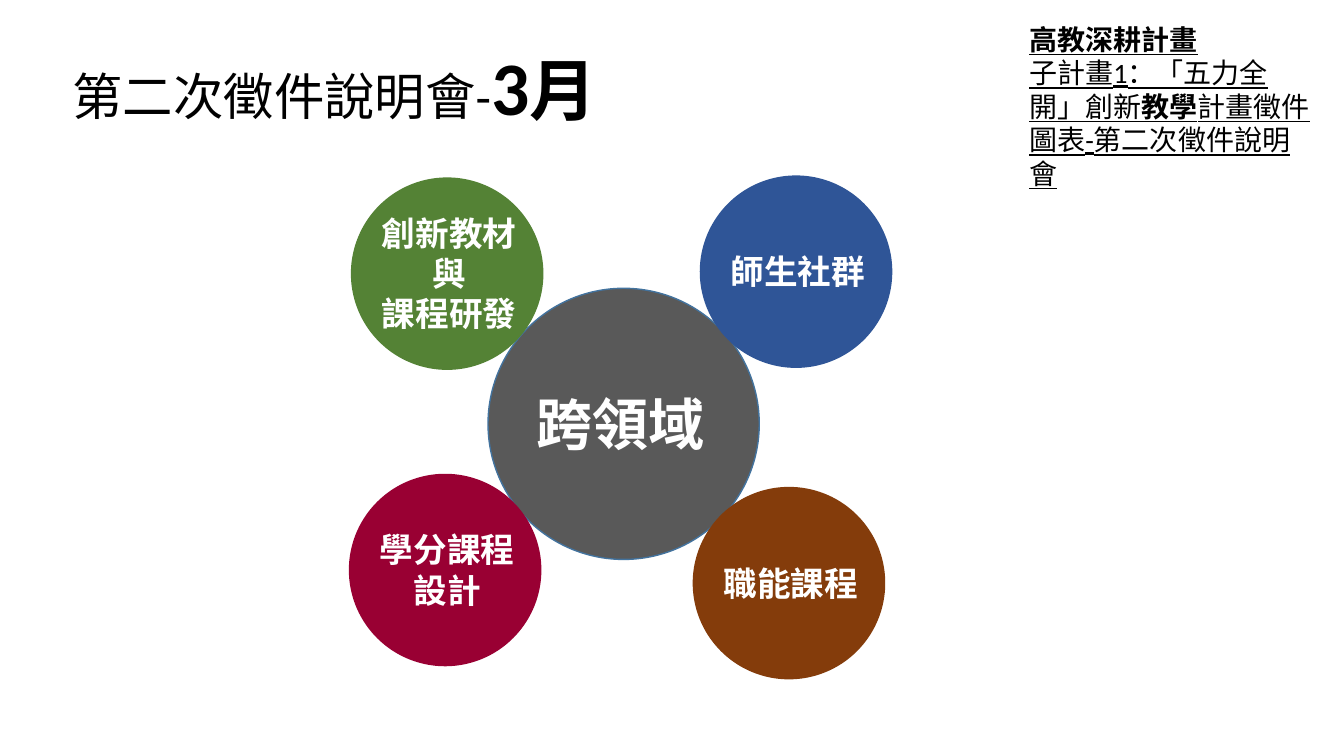
from pptx import Presentation
from pptx.dml.color import RGBColor
from pptx.enum.shapes import MSO_SHAPE
from pptx.enum.text import MSO_ANCHOR, PP_ALIGN
from pptx.util import Inches, Pt

OVAL = MSO_SHAPE.OVAL
MIDDLE, TOP = MSO_ANCHOR.MIDDLE, MSO_ANCHOR.TOP
LEFT, CENTER = PP_ALIGN.LEFT, PP_ALIGN.CENTER
BODY_FONT, LABEL_FONT = "Calibri", "Manrope"
HUB_SIZE, THEME_SIZE = 2.69, 1.91


def color(hex_string):
    return RGBColor.from_string(hex_string)


def add_run(p, text, size, font, ink="000000", bold=False, underline=False):
    r = p.add_run()
    r.text = text
    r.font.size = Pt(size)
    r.font.name = font
    r.font.color.rgb = color(ink)
    r.font.bold = bold
    r.font.underline = underline


def add_text_box(shapes, box, anchor=TOP):
    sp = shapes.add_textbox(*(Inches(v) for v in box))
    tf = sp.text_frame
    tf.word_wrap = True
    tf.vertical_anchor = anchor
    return tf


def add_title(slide, box):
    p = add_text_box(slide.shapes, box, MIDDLE).paragraphs[0]
    p.line_spacing = 0.9
    add_run(p, "第二次徵件說明會-", 36, BODY_FONT)
    add_run(p, "3", 54, BODY_FONT, bold=True)
    add_run(p, "月", 48, BODY_FONT, bold=True)


def add_plan_note(slide, box):
    tf = add_text_box(slide.shapes, box)
    lines = [
        [("高教深耕計畫", True)],
        [("子計畫1：「五力全開」創新", False), ("教學", True),
         ("計畫徵件圖表-第二次徵件說明會", False)],
    ]
    for i, runs in enumerate(lines):
        p = tf.add_paragraph() if i else tf.paragraphs[0]
        for text, bold in runs:
            add_run(p, text, 20, BODY_FONT, bold=bold, underline=True)


def add_circle(slide, box, fill, lines, size, label_size, align=CENTER, outline=None):
    """Circle with its label centred on it, grouped together."""
    x, y, d = box
    w, h = label_size
    shapes = slide.shapes.add_group_shape().shapes
    sp = shapes.add_shape(OVAL, Inches(x), Inches(y), Inches(d), Inches(d))
    sp.shadow.inherit = False
    sp.fill.solid()
    sp.fill.fore_color.rgb = color(fill)
    if outline:
        sp.line.color.rgb = color(outline)
        sp.line.width = Pt(1)
    else:
        sp.line.fill.background()

    label_box = (x + (d - w) / 2 + 0.02, y + (d - h) / 2, w, h)
    p = add_text_box(shapes, label_box).paragraphs[0]
    p.alignment = align
    for i, line in enumerate(lines):
        if i:
            p.add_line_break()
        add_run(p, line, size, LABEL_FONT, "FFFFFF", bold=True)


def add_theme_diagram(slide, x, y):
    # Hub
    add_circle(slide, (x + 1.38, y + 1.12, HUB_SIZE), "595959", ["跨領域"], 40,
               (1.97, 0.77), LEFT, "43739E")
    # Themes around the hub: offset, fill, label lines, label height
    themes = [
        (0.02, 0.02, "548235", ["創新教材", "與", "課程研發"], 1.31),
        (0, 2.96, "990033", ["學分課程設計"], 0.91),
        (3.48, 0, "2F5597", ["師生社群"], 0.5),
        (3.41, 3.09, "843C0B", ["職能課程"], 0.5),
    ]
    for dx, dy, fill, lines, h in themes:
        add_circle(slide, (x + dx, y + dy, THEME_SIZE), fill, lines, 24, (1.67, h))


def main():
    prs = Presentation()
    prs.slide_width, prs.slide_height = Inches(13.33), Inches(7.5)
    slide = prs.slides.add_slide(prs.slide_layouts[6])
    add_plan_note(slide, (10.11, 0.17, 3.06, 1.45))
    add_theme_diagram(slide, 3.46, 1.74)
    add_title(slide, (0.62, 0.18, 5.96, 1.45))
    prs.save("out.pptx")


if __name__ == "__main__":
    main()
